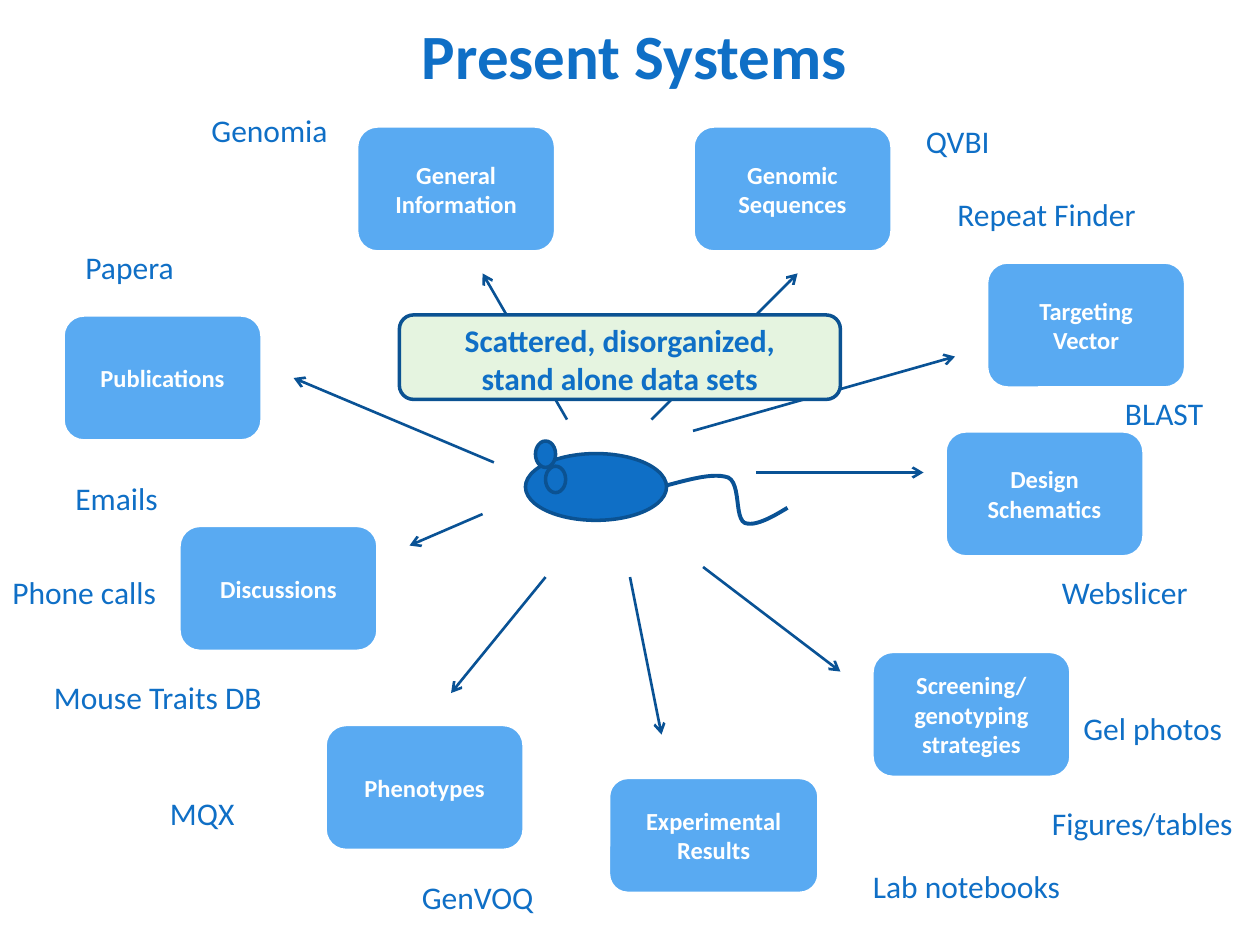
"""Build the Present Systems slide: a mouse surrounded by scattered data sets."""
from lxml.etree import SubElement
from pptx import Presentation
from pptx.dml.color import RGBColor
from pptx.enum.shapes import MSO_CONNECTOR as Connector, MSO_SHAPE as Shape
from pptx.enum.text import MSO_ANCHOR as Anchor, MSO_AUTO_SIZE as AutoSize, PP_ALIGN as Align
from pptx.oxml.ns import qn
from pptx.util import Inches, Pt

FONT = "Calibri"
BLUE, LIGHT_BLUE, WHITE, GREEN = "0F6FC6", "59AAF2", "FFFFFF", "E5F4E0"
ARROW_BLUE, OUTLINE_BLUE = "095295", "0B5292"

TITLE = ("Present Systems", 3.25, 0.08, 4.42, 0.71)
BANNER = ("Scattered, disorganized,\vstand alone data sets", 3.17, 2.5, 3.5, 0.71)
BANNER_HEIGHT = 0.67
BOX_SIZE = (1.58, 1)
BOXES = [
    ("General Information", 2.83, 1, *BOX_SIZE),
    ("Discussions", 1.42, 4.17, *BOX_SIZE),
    ("Phenotypes", 2.58, 5.75, *BOX_SIZE),
    ("Screening/\vgenotyping\vstrategies", 6.92, 5.17, *BOX_SIZE),
    ("Design Schematics", 7.5, 3.42, *BOX_SIZE),
    ("Targeting Vector", 7.83, 2.08, *BOX_SIZE),
    ("Genomic\vSequences", 5.5, 1, *BOX_SIZE),
    ("Publications", 0.5, 2.5, *BOX_SIZE),
    ("Experimental\nResults", 4.83, 6.17, 1.67, 0.92),
]
ARROWS = [
    (5.5, 3.42, 7.58, 2.83), (5.17, 3.33, 6.33, 2.17), (4.5, 3.33, 3.83, 2.17),
    (6, 3.75, 7.33, 3.75), (5.58, 4.5, 6.67, 5.33), (5, 4.58, 5.25, 5.83),
    (4.33, 4.58, 3.58, 5.5), (3.83, 4.08, 3.25, 4.33), (3.92, 3.67, 2.33, 3),
]
LABELS = [
    ("Papera", 0.58, 1.92, 1.17, 0.4),
    ("Genomia", 1.58, 0.83, 1.17, 0.4),
    ("BLAST", 8.83, 3.08, 1.17, 0.4),
    ("Repeat Finder", 7.5, 1.5, 2.08, 0.42),
    ("QVBI", 7.25, 0.92, 1.17, 0.4),
    ("MQX", 1.25, 6.25, 1.17, 0.4),
    ("Lab notebooks", 6.83, 6.83, 1.83, 0.4),
    ("Emails", 0.5, 3.75, 1.17, 0.4),
    ("Webslicer", 8.33, 4.5, 2.08, 0.42),
    ("Gel photos", 8.5, 5.58, 2.08, 0.42),
    ("GenVOQ", 3.25, 6.92, 1.17, 0.4),
    ("Mouse Traits DB", 0.33, 5.33, 2.83, 0.42),
    ("Phone calls", 0, 4.5, 1.67, 0.4),
    ("Figures/tables", 8.25, 6.33, 2.08, 0.42),
]
MOUSE_BODY = (4.17, 3.6, 1.12, 0.53)
MOUSE_EARS = [(4.25, 3.5, 0.16, 0.21), (4.33, 3.7, 0.16, 0.21)]
TAIL_START = (5.3, 3.85)
TAIL_CURVES = [
    ((5.49, 3.8), (5.67, 3.75), (5.78, 3.79)),
    ((5.88, 3.84), (5.83, 4.11), (5.91, 4.15)),
    ((5.99, 4.18), (6.12, 4.11), (6.25, 4.03)),
]
CURVE_STEPS = 12


def color(value):
    return RGBColor.from_string(value)


def set_line(shape, value, width):
    shape.line.color.rgb = color(value)
    shape.line.width = Pt(width)


def write(shape, text, size, value, bold=False, align=Align.LEFT):
    frame = shape.text_frame
    frame.word_wrap = True
    frame.text = text
    for paragraph in frame.paragraphs:
        paragraph.alignment = align
        for run in paragraph.runs:
            run.font.name = FONT
            run.font.size = Pt(size)
            run.font.bold = bold
            run.font.color.rgb = color(value)


def add_shape(slide, kind, bounds, fill, line):
    shape = slide.shapes.add_shape(kind, *map(Inches, bounds))
    shape.shadow.inherit = False
    shape.fill.solid()
    shape.fill.fore_color.rgb = color(fill)
    set_line(shape, line, 2)
    return shape


def add_text(slide, item, size, **style):
    text, *bounds = item
    box = slide.shapes.add_textbox(*map(Inches, bounds))
    write(box, text, size, BLUE, **style)
    box.text_frame.auto_size = AutoSize.SHAPE_TO_FIT_TEXT


def add_arrow(slide, ends):
    arrow = slide.shapes.add_connector(Connector.STRAIGHT, *map(Inches, ends))
    set_line(arrow, ARROW_BLUE, 1.5)
    properties = arrow._element.spPr
    SubElement(properties.find(qn("a:ln")), qn("a:tailEnd"), type="arrow")
    SubElement(properties, qn("a:effectLst"))


def curve_points(start, curves):
    points = []
    for first, second, end in curves:
        for step in range(1, CURVE_STEPS + 1):
            t = step / CURVE_STEPS
            weights = ((1 - t) ** 3, 3 * t * (1 - t) ** 2, 3 * t ** 2 * (1 - t), t ** 3)
            controls = (start, first, second, end)
            points.append(tuple(
                Inches(sum(weight * point[axis] for weight, point in zip(weights, controls)))
                for axis in (0, 1)))
        start = end
    return points


def add_mouse(slide):
    add_shape(slide, Shape.OVAL, MOUSE_BODY, BLUE, OUTLINE_BLUE)
    builder = slide.shapes.build_freeform(*map(Inches, TAIL_START))
    builder.add_line_segments(curve_points(TAIL_START, TAIL_CURVES), close=False)
    tail = builder.convert_to_shape()
    tail.shadow.inherit = False
    tail.fill.background()
    set_line(tail, ARROW_BLUE, 2.25)
    for ear in MOUSE_EARS:
        add_shape(slide, Shape.OVAL, ear, BLUE, OUTLINE_BLUE)


def main():
    presentation = Presentation()
    presentation.slide_width, presentation.slide_height = Inches(10), Inches(7.5)
    slide = presentation.slides.add_slide(presentation.slide_layouts[6])
    for ends in ARROWS:
        add_arrow(slide, ends)
    for text, *bounds in BOXES:
        box = add_shape(slide, Shape.ROUNDED_RECTANGLE, bounds, LIGHT_BLUE, WHITE)
        write(box, text, 14, WHITE, bold=True, align=Align.CENTER)
        box.text_frame.vertical_anchor = Anchor.MIDDLE
    add_mouse(slide)
    add_text(slide, TITLE, 36, bold=True)
    for label in LABELS:
        add_text(slide, label, 18)
    add_shape(slide, Shape.ROUNDED_RECTANGLE, (*BANNER[1:4], BANNER_HEIGHT), GREEN, OUTLINE_BLUE)
    add_text(slide, BANNER, 18, bold=True, align=Align.CENTER)
    presentation.save("out.pptx")


if __name__ == "__main__":
    main()
